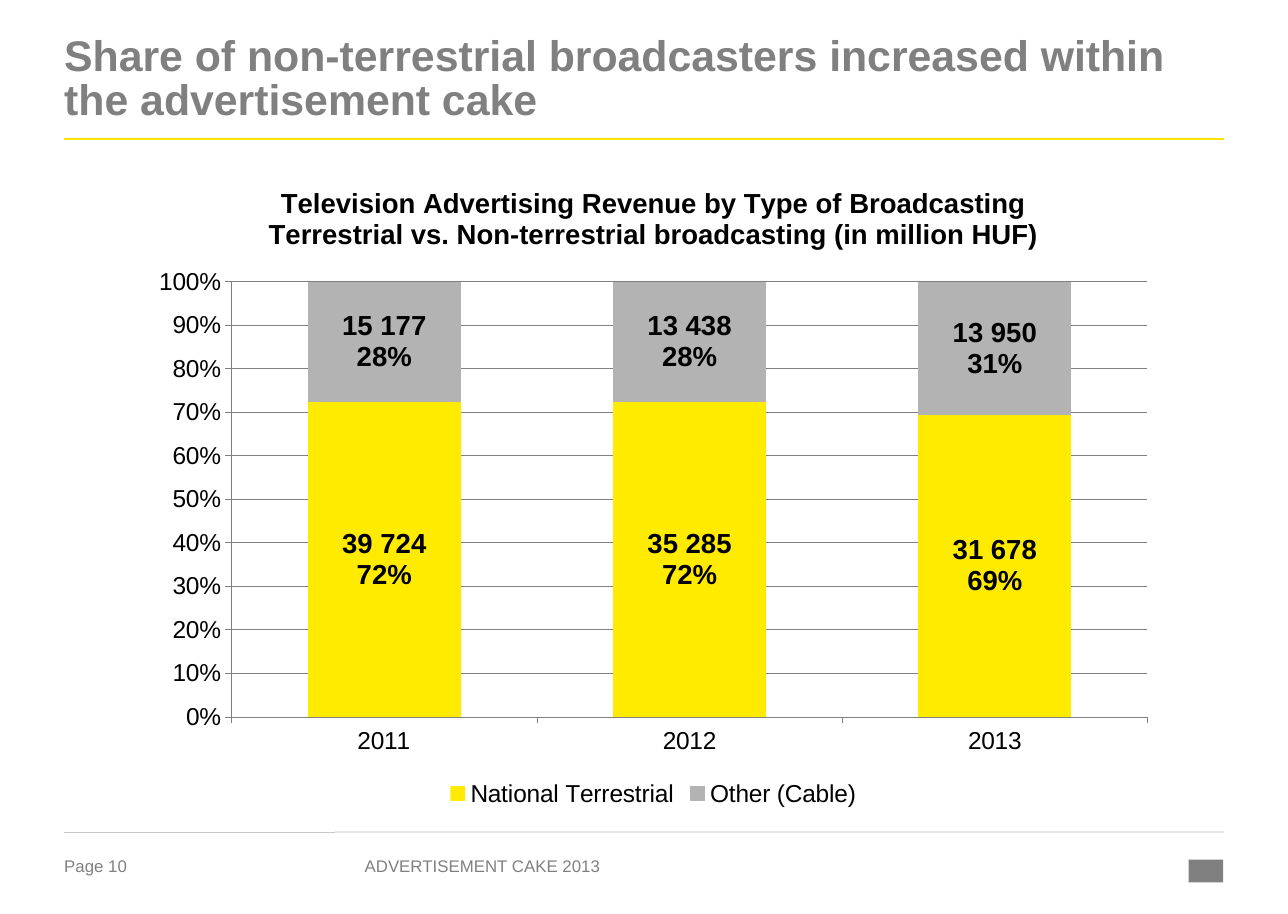
from lxml.etree import SubElement
from pptx import Presentation
from pptx.chart.data import CategoryChartData
from pptx.dml.color import RGBColor
from pptx.enum.chart import XL_CHART_TYPE, XL_LABEL_POSITION, XL_LEGEND_POSITION, XL_TICK_MARK
from pptx.enum.shapes import MSO_CONNECTOR, MSO_SHAPE
from pptx.enum.text import MSO_ANCHOR, MSO_AUTO_SIZE, PP_ALIGN
from pptx.oxml.ns import qn
from pptx.util import Pt

GRAY = RGBColor(0x80, 0x80, 0x80)
RULE_GRAY = RGBColor(0xC8, 0xC8, 0xC8)
PALE_GRAY = RGBColor(0xE6, 0xE6, 0xE6)
RULE_YELLOW = RGBColor(0xFF, 0xE6, 0x00)
BAR_YELLOW = RGBColor(0xFF, 0xEB, 0x00)
BAR_GRAY = RGBColor(0xB3, 0xB3, 0xB3)
BLACK = RGBColor(0, 0, 0)
LEFT, RIGHT = 42, 800.3
CHART_WIDTH, CHART_HEIGHT = 673.2, 423.4


def style_font(font, size, color, bold=False):
    font.name = "Arial"
    font.size = Pt(size)
    font.bold = bold
    font.color.rgb = color


def clear_margins(frame):
    frame.margin_left = frame.margin_right = frame.margin_top = frame.margin_bottom = 0
    frame.word_wrap = True
    frame.auto_size = MSO_AUTO_SIZE.NONE
    frame.vertical_anchor = MSO_ANCHOR.TOP


presentation = Presentation()
presentation.slide_width = Pt(842.4)
presentation.slide_height = Pt(597.6)
slide = presentation.slides.add_slide(presentation.slide_layouts[5])

# Title
title = slide.shapes.title
title.left, title.top, title.width, title.height = Pt(LEFT), Pt(24), Pt(RIGHT - LEFT), Pt(67.5)
title.text_frame.text = "Share of non-terrestrial broadcasters increased within the advertisement cake"
clear_margins(title.text_frame)
paragraph = title.text_frame.paragraphs[0]
paragraph.alignment = PP_ALIGN.LEFT
paragraph.line_spacing = 0.85
style_font(paragraph.font, 28, GRAY, True)

# Rules below the title and above the footer
for start, end, y, color, width in [
    (LEFT, RIGHT, 90.8, RULE_YELLOW, 1.5),
    (LEFT, 219, 544, RULE_GRAY, 0.25),
    (219, RIGHT, 544, PALE_GRAY, 0.75),
]:
    rule = slide.shapes.add_connector(MSO_CONNECTOR.STRAIGHT, Pt(start), Pt(y), Pt(end), Pt(y))
    rule.line.color.rgb = color
    rule.line.width = Pt(width)
    SubElement(rule._element.spPr, qn("a:effectLst"))

# Footer
for text, left, width in [("Page 10", LEFT, 61), ("ADVERTISEMENT CAKE 2013", 238.5, 316)]:
    box = slide.shapes.add_textbox(Pt(left), Pt(559.5), Pt(width), Pt(17))
    box.text_frame.text = text
    clear_margins(box.text_frame)
    style_font(box.text_frame.paragraphs[0].font, 11, GRAY)

# Plain mark in the footer corner
mark = slide.shapes.add_shape(MSO_SHAPE.RECTANGLE, Pt(777.5), Pt(562), Pt(22.5), Pt(15))
mark.fill.solid()
mark.fill.fore_color.rgb = GRAY
mark.line.fill.background()
mark.shadow.inherit = False

# Revenue chart
revenues = [
    ("National Terrestrial", BAR_YELLOW, (39724, 35285, 31678), ("72%", "72%", "69%")),
    ("Other (Cable)", BAR_GRAY, (15177, 13438, 13950), ("28%", "28%", "31%")),
]
chart_data = CategoryChartData(number_format="#,##0")
chart_data.categories = ["2011", "2012", "2013"]
for name, color, values, shares in revenues:
    chart_data.add_series(name, values)
chart = slide.shapes.add_chart(
    XL_CHART_TYPE.COLUMN_STACKED_100,
    Pt(90.7), Pt(107.3), Pt(CHART_WIDTH), Pt(CHART_HEIGHT), chart_data,
).chart
style_font(chart.font, 18, BLACK)

chart.has_title = True
chart.chart_title.include_in_layout = False
title_frame = chart.chart_title.text_frame
title_frame.text = (
    "Television Advertising Revenue by Type of Broadcasting\n"
    "Terrestrial vs. Non-terrestrial broadcasting (in million HUF)"
)
for paragraph in title_frame.paragraphs:
    style_font(paragraph.font, 18, BLACK, True)

chart.has_legend = True
chart.legend.position = XL_LEGEND_POSITION.BOTTOM
chart.legend.include_in_layout = False
style_font(chart.legend.font, 16, BLACK)

# Axes
for axis in (chart.category_axis, chart.value_axis):
    style_font(axis.tick_labels.font, 16, BLACK)
    axis.major_tick_mark = XL_TICK_MARK.OUTSIDE
    axis.format.line.color.rgb = GRAY
    axis.format.line.width = Pt(0.25)
value_axis = chart.value_axis
value_axis.tick_labels.number_format = "0%"
value_axis.tick_labels.number_format_is_linked = False
value_axis.major_gridlines.format.line.color.rgb = GRAY
value_axis.major_gridlines.format.line.width = Pt(0.25)

# Columns with amount and share
plot = chart.plots[0]
plot.gap_width = 100
plot.overlap = 100
plot.vary_by_categories = False
for series, (name, color, values, shares) in zip(plot.series, revenues):
    series.format.fill.solid()
    series.format.fill.fore_color.rgb = color
    series.data_labels.show_value = True
    style_font(series.data_labels.font, 18, BLACK, True)
    for index, (value, share) in enumerate(zip(values, shares)):
        label = series.points[index].data_label
        amount = f"{value:,}".replace(",", " ")
        label.text_frame.text = f"{amount}\n{share}"
        label.position = XL_LABEL_POSITION.CENTER
        for paragraph in label.text_frame.paragraphs:
            style_font(paragraph.runs[0].font, 18, BLACK, True)

# Fixed plot area, as fractions of the chart
plot_area = chart._chartSpace.chart.plotArea
for layout in plot_area.findall(qn("c:layout")):
    plot_area.remove(layout)
layout = plot_area.makeelement(qn("c:layout"), {})
plot_area.insert(0, layout)
manual_layout = SubElement(layout, qn("c:manualLayout"))
for tag, value in [
    ("layoutTarget", "inner"), ("xMode", "edge"), ("yMode", "edge"),
    ("x", 60.8 / CHART_WIDTH), ("y", 76.8 / CHART_HEIGHT),
    ("w", 599 / CHART_WIDTH), ("h", 284.6 / CHART_HEIGHT),
]:
    SubElement(manual_layout, qn(f"c:{tag}")).set("val", str(value))

presentation.save("out.pptx")
